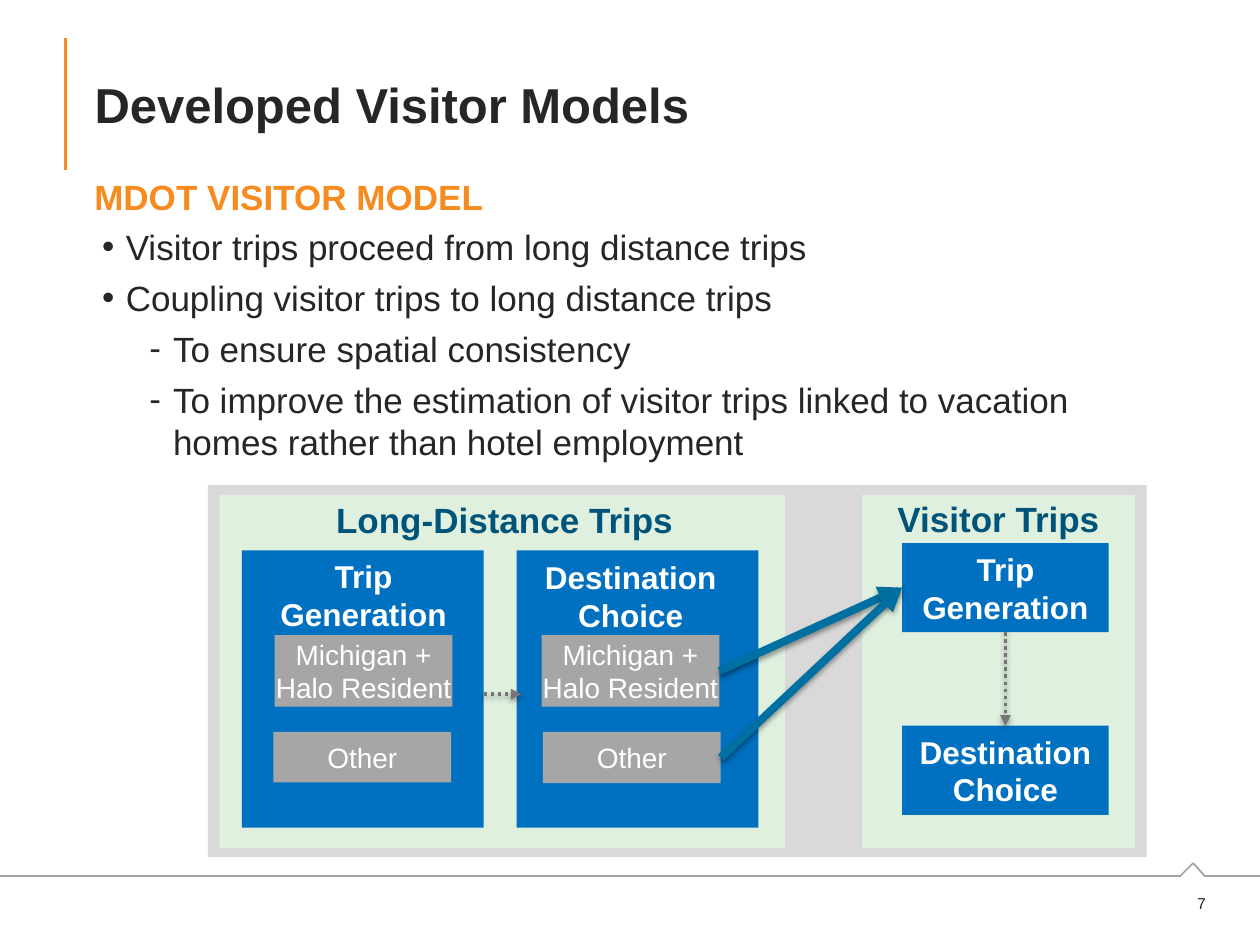
from dataclasses import dataclass
from itertools import pairwise

from lxml import etree
from pptx import Presentation
from pptx.dml.color import RGBColor
from pptx.enum import dml, shapes, text
from pptx.oxml import parse_xml
from pptx.oxml.ns import nsdecls, qn
from pptx.util import Pt


@dataclass(frozen=True)
class Theme:
    font: str = "Arial"
    ink: str = "262626"
    orange: str = "F68B1F"
    rule: str = "A3A3A5"
    frame: str = "D9D9D9"
    panel: str = "E0F0DF"
    blue: str = "0070C0"
    gray: str = "A6A6A6"
    navy: str = "005379"
    arrow: str = "006FA1"
    dotted: str = "757578"
    white: str = "FFFFFF"
    title_size: float = 28
    body_size: float = 20
    stage_size: float = 18
    group_size: float = 16
    number_size: float = 9


theme = Theme()
align = text.PP_ALIGN
anchor = text.MSO_ANCHOR

deck = Presentation()
deck.slide_width, deck.slide_height = Pt(720), Pt(540)
page = deck.slides.add_slide(deck.slide_layouts[5])


def write(box, words, size, color, bold=False, alignment=align.CENTER,
          middle=True, side_inset=7.2):
    """Put one formatted paragraph into a shape's text frame."""
    frame = box.text_frame
    frame.word_wrap = True
    frame.auto_size = text.MSO_AUTO_SIZE.NONE
    frame.vertical_anchor = anchor.MIDDLE if middle else anchor.TOP
    frame.margin_left = frame.margin_right = Pt(side_inset)
    para = frame.paragraphs[0]
    para.alignment = alignment
    span = para.add_run()
    span.text = words
    span.font.name, span.font.size, span.font.bold = theme.font, Pt(size), bold
    span.font.color.rgb = RGBColor.from_string(color)


def draw_line(start, end, color, width, arrow=False, dotted=False):
    """Add a straight line; arrows get a head and a soft shadow."""
    line = page.shapes.add_connector(
        shapes.MSO_CONNECTOR.STRAIGHT, *map(Pt, (*start, *end)))
    line.line.color.rgb = RGBColor.from_string(color)
    line.line.width = Pt(width)
    if dotted:
        line.line.dash_style = dml.MSO_LINE.ROUND_DOT
    effects = etree.SubElement(line._element.spPr, qn("a:effectLst"))
    if arrow:
        etree.SubElement(line.line._get_or_add_ln(), qn("a:tailEnd"), type="triangle")
        effects.append(parse_xml(
            f'<a:outerShdw {nsdecls("a")} blurRad="{Pt(3.1)}" dist="{Pt(1.6)}" '
            'dir="5400000" rotWithShape="0"><a:srgbClr val="000000">'
            '<a:alpha val="38000"/></a:srgbClr></a:outerShdw>'))
    return line


# Page furniture
draw_line((37.5, 21.6), (37.5, 97.2), theme.orange, 1.5)
footer_points = [(0, 500.4), (674.6, 500.4), (681.8, 493.2), (688.3, 500.4), (720, 500.4)]
for start, end in pairwise(footer_points):
    draw_line(start, end, theme.rule, 1)
number = page.shapes.add_textbox(Pt(666), Pt(507), Pt(30.2), Pt(18))
write(number, "7", theme.number_size, theme.ink, alignment=align.RIGHT)

# Title and bullets
title = page.shapes.title
title.left, title.top, title.width, title.height = map(Pt, (46.8, 21.6, 637.2, 75.6))
write(title, "Developed Visitor Models", theme.title_size, theme.ink, True, align.LEFT)

body = page.shapes.add_textbox(Pt(46.8), Pt(96.5), Pt(600.5), Pt(237))
write(body, "MDOT VISITOR MODEL", theme.body_size, theme.orange, True, align.LEFT, False)
bullets = [
    (1, "Visitor trips proceed from long distance trips"),
    (1, "Coupling visitor trips to long distance trips"),
    (2, "To ensure spatial consistency"),
    (2, "To improve the estimation of visitor trips linked to vacation homes "
        "rather than hotel employment"),
]
for level, words in bullets:
    para = body.text_frame.add_paragraph()
    para.level = level
    props = para._p.get_or_add_pPr()
    props.set("marL", str(Pt(18 if level == 1 else 45)))
    props.set("indent", str(Pt(-13.5)))
    etree.SubElement(props, qn("a:buFont"), typeface=theme.font)
    etree.SubElement(props, qn("a:buChar"), char="•" if level == 1 else "-")
    para.space_before = Pt(5)
    span = para.add_run()
    span.text = words
    span.font.name, span.font.size = theme.font, Pt(theme.body_size)
    span.font.color.rgb = RGBColor.from_string(theme.ink)

# Diagram boxes: name, left, top, width, height, fill, words, type size, bold, side inset
resident = "Michigan + Halo Resident"
small, stage = theme.group_size, theme.stage_size
boxes = [
    ("frame", 118.8, 277.2, 536.4, 212.4, theme.frame, "", 0, False, 0),
    ("long panel", 125.3, 283, 323.3, 201.6, theme.panel, "", 0, False, 0),
    ("visitor panel", 492.5, 283, 156.2, 201.6, theme.panel, "", 0, False, 0),
    ("generation", 138.2, 314.6, 138.2, 158.4, theme.blue, "", 0, False, 0),
    ("choice", 295.2, 314.6, 138.2, 158.4, theme.blue, "", 0, False, 0),
    ("generation resident", 157, 362.9, 101.6, 41, theme.gray, resident, small, False, 0),
    ("generation other", 156.3, 418.3, 101.6, 28.8, theme.gray, "Other", small, False, 7.2),
    ("choice resident", 309.5, 362.9, 101.6, 41, theme.gray, resident, small, False, 0),
    ("choice other", 310.3, 418.3, 101.6, 29.3, theme.gray, "Other", small, False, 7.2),
    ("visitor generation", 515.5, 310.3, 118.1, 51, theme.blue,
     "Trip Generation", stage, True, 7.2),
    ("visitor choice", 515.5, 414.7, 118.1, 51, theme.blue,
     "Destination Choice", stage, True, 7.2),
]
placed = {}
for name, left, top, width, height, fill, words, size, bold, inset in boxes:
    box = page.shapes.add_shape(
        shapes.MSO_SHAPE.RECTANGLE, *map(Pt, (left, top, width, height)))
    box.shadow.inherit = False
    box.fill.solid()
    box.fill.fore_color.rgb = RGBColor.from_string(fill)
    box.line.fill.background()
    if words:
        write(box, words, size, theme.white, bold, side_inset=inset)
    placed[name] = box

# Diagram headings
headings = [
    ("Long-Distance Trips", 185, 281.5, 230.4, 26, theme.body_size, theme.navy, align.LEFT),
    ("Visitor Trips", 496.1, 280.8, 149, 26, theme.body_size, theme.navy, align.CENTER),
    ("Trip Generation", 143.3, 314.6, 128.9, 42.5, stage, theme.white, align.CENTER),
    ("Destination Choice", 301.7, 315.4, 117.4, 51, stage, theme.white, align.CENTER),
]
for words, left, top, width, height, size, color, alignment in headings:
    box = page.shapes.add_textbox(*map(Pt, (left, top, width, height)))
    write(box, words, size, color, True, alignment, middle=False)

# Arrows: (box, side) pairs, with sides 0 top, 1 left, 2 bottom, 3 right
links = [
    ("choice resident", 3, "visitor generation", 1, theme.arrow, 4.5, False),
    ("choice other", 3, "visitor generation", 1, theme.arrow, 4.5, False),
    ("visitor generation", 2, "visitor choice", 0, theme.dotted, 2, True),
]
for source, source_side, target, target_side, color, width, dotted in links:
    link = draw_line((0, 0), (0, 0), color, width, True, dotted)
    link.begin_connect(placed[source], source_side)
    link.end_connect(placed[target], target_side)
draw_line((276.4, 396.7), (298, 396.7), theme.dotted, 2, True, True)

deck.save("out.pptx")
